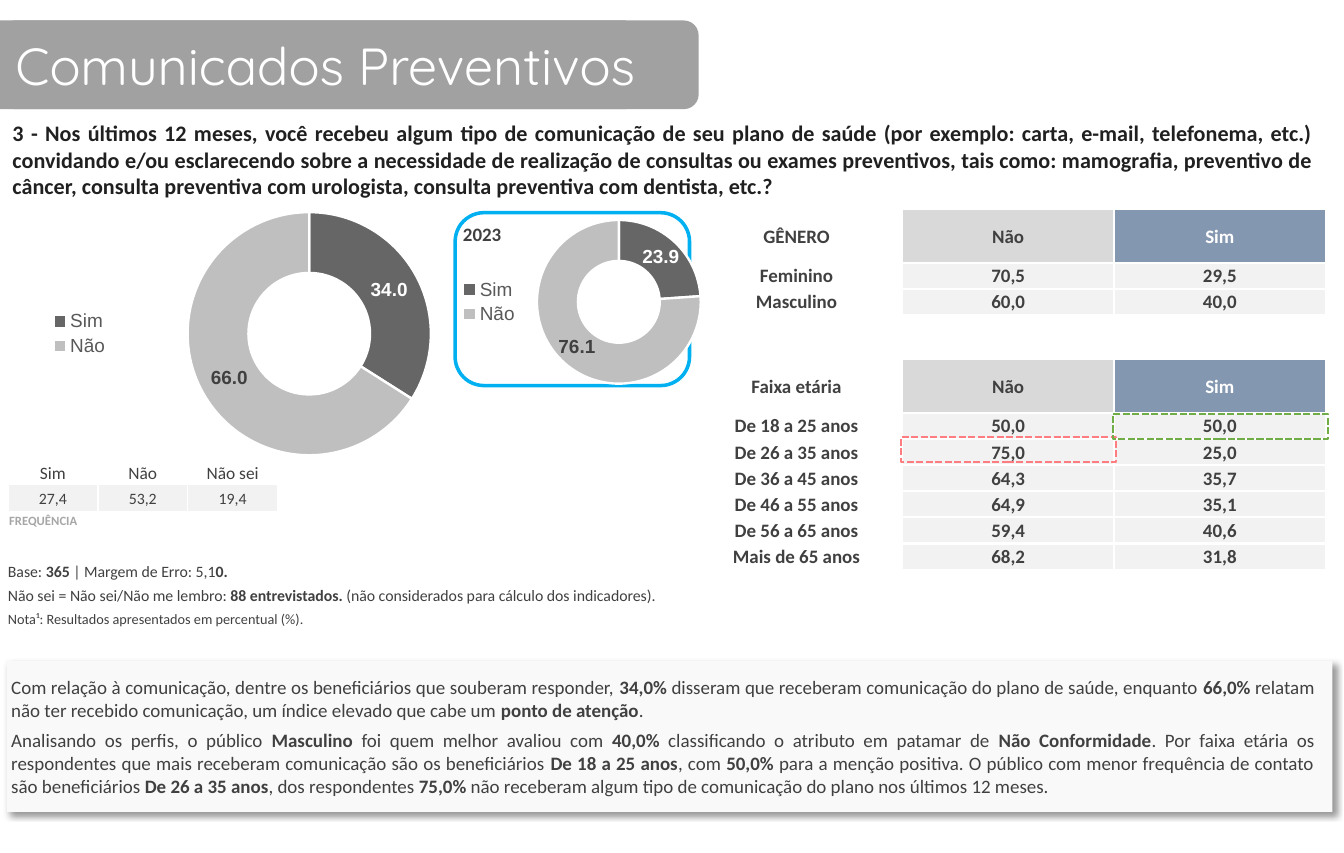
from lxml import etree
from pptx import Presentation
from pptx.chart.data import CategoryChartData
from pptx.dml.color import RGBColor
from pptx.enum.chart import XL_CHART_TYPE, XL_LEGEND_POSITION
from pptx.enum.dml import MSO_LINE
from pptx.enum.shapes import MSO_SHAPE
from pptx.enum.text import MSO_ANCHOR, PP_ALIGN
from pptx.oxml import parse_xml
from pptx.oxml.ns import nsdecls
from pptx.util import Cm, Inches, Pt

# Content; ** marks the start and end of bold text
TITLE = "Comunicados Preventivos"
QUESTION = (
    "**3 - Nos últimos 12 meses, você recebeu algum tipo de comunicação de seu plano de saúde "
    "(por exemplo: carta, e-mail, telefonema, etc.) convidando e/ou esclarecendo sobre a "
    "necessidade de realização de consultas ou exames preventivos, tais como: mamografia, "
    "preventivo de câncer, consulta preventiva com urologista, consulta preventiva com "
    "dentista, etc.?**"
)
NOTES = [
    ("Base: **365** | Margem de Erro: 5,1**0.**", 10),
    ("Não sei = Não sei/Não me lembro: **88 entrevistados.** "
     "(não considerados para cálculo dos indicadores).", 10),
    ("Nota¹: Resultados apresentados em percentual (%).", 9),
]
CONCLUSIONS = [
    "Com relação à comunicação, dentre os beneficiários que souberam responder, **34,0%** "
    "disseram que receberam comunicação do plano de saúde, enquanto **66,0%** relatam não ter "
    "recebido comunicação, um índice elevado que cabe um **ponto de atenção**.",
    "Analisando os perfis, o público **Masculino** foi quem melhor avaliou com **40,0%** "
    "classificando o atributo em patamar de **Não Conformidade**. Por faixa etária os "
    "respondentes que mais receberam comunicação são os beneficiários **De 18 a 25 anos**, com "
    "**50,0% **para a menção positiva. O público com menor frequência de contato são "
    "beneficiários **De 26 a 35 anos**, dos respondentes **75,0% **não receberam algum tipo de "
    "comunicação do plano nos últimos 12 meses.",
]
FREQUENCY = [("Sim", "Não", "Não sei"), ("27,4", "53,2", "19,4"), ("FREQUÊNCIA",)]
PROFILE = [
    ("GÊNERO", "Não", "Sim"),
    ("Feminino", "70,5", "29,5"),
    ("Masculino", "60,0", "40,0"),
    (),
    ("Faixa etária", "Não", "Sim"),
    ("De 18 a 25 anos", "50,0", "50,0"),
    ("De 26 a 35 anos", "75,0", "25,0"),
    ("De 36 a 45 anos", "64,3", "35,7"),
    ("De 46 a 55 anos", "64,9", "35,1"),
    ("De 56 a 65 anos", "59,4", "40,6"),
    ("Mais de 65 anos", "68,2", "31,8"),
]
PROFILE_HEADERS = (0, 4)
# Chart values, chart frame (inches) and ring frame (fractions of the chart)
DOUGHNUTS = [
    ((23.9, 76.1), (3.94, 1.72, 2.36, 1.87), (0.33, 0.11, 0.61, 0.78)),
    ((34, 66), (0.34, 1.72, 4.1, 2.43), (0.31, 0.06, 0.54, 0.88)),
]
HIGHLIGHTS = [(7.92, 3.84, "FF7C80"), (9.78, 3.64, "70AD47")]
TEXT, BANNER, PALE, WHITE = "404040", "A1A1A1", "F2F2F2", "FFFFFF"
SLICES = [("Sim", "666666", WHITE), ("Não", "BFBFBF", TEXT)]

presentation = Presentation()
presentation.slide_width = Cm(30)
presentation.slide_height = Inches(7.5)
slide = presentation.slides.add_slide(presentation.slide_layouts[6])


def color(value):
    return RGBColor.from_string(value)


def style_font(font, size, ink, bold=False, name="Calibri"):
    font.size, font.bold, font.name = Pt(size), bold, name
    font.color.rgb = color(ink)


def write(frame, paragraphs, size=12, ink=TEXT, name="Calibri", align=PP_ALIGN.LEFT,
          anchor=MSO_ANCHOR.TOP, margins=(0.1, 0.05, 0.1, 0.05), gap=0, wrap=True):
    frame.word_wrap, frame.vertical_anchor = wrap, anchor
    (frame.margin_left, frame.margin_top,
     frame.margin_right, frame.margin_bottom) = map(Inches, margins)
    for index, text in enumerate(paragraphs):
        paragraph = frame.add_paragraph() if index else frame.paragraphs[0]
        paragraph.alignment = align
        if index:
            paragraph.space_before = Pt(gap)
        for part, words in enumerate(text.split("**")):
            if words:
                run = paragraph.add_run()
                run.text = words
                style_font(run.font, size, ink, part % 2 == 1, name)


def add_box(kind, frame, fill=None, line=None, width=1.5, dash=None):
    shape = slide.shapes.add_shape(kind, *map(Inches, frame))
    shape.shadow.inherit = False
    if fill:
        shape.fill.solid()
        shape.fill.fore_color.rgb = color(fill)
    else:
        shape.fill.background()
    if line:
        shape.line.color.rgb = color(line)
        shape.line.width = Pt(width)
        shape.line.dash_style = dash
    else:
        shape.line.fill.background()
    return shape


def add_text(frame, paragraphs, **text_format):
    write(slide.shapes.add_textbox(*map(Inches, frame)).text_frame, paragraphs, **text_format)


def add_grid(left, top, widths, heights):
    table = slide.shapes.add_table(
        len(heights), len(widths), Inches(left), Inches(top),
        Inches(sum(widths)), Inches(sum(heights))).table
    table.first_row = table.horz_banding = False
    for column, width in zip(table.columns, widths):
        column.width = Inches(width)
    for row, height in zip(table.rows, heights):
        row.height = Inches(height)
    return table


def fill_cell(cell, text, fill=None, border=0, **text_format):
    write(cell.text_frame, [text], **text_format)
    cell.vertical_anchor = text_format.get("anchor", MSO_ANCHOR.TOP)
    (cell.margin_left, cell.margin_top,
     cell.margin_right, cell.margin_bottom) = map(Inches, (0.01, 0.01, 0.01, 0))
    if fill:
        cell.fill.solid()
        cell.fill.fore_color.rgb = color(fill)
    else:
        cell.fill.background()
    if border:
        for index, side in enumerate("LRTB"):
            cell._tc.get_or_add_tcPr().insert(index, parse_xml(
                f'<a:ln{side} {nsdecls("a")} w="{Pt(border)}"><a:solidFill>'
                f'<a:srgbClr val="{WHITE}"/></a:solidFill></a:ln{side}>'))


def add_doughnut(values, frame, ring):
    data = CategoryChartData(number_format="0.0")
    data.categories = [name for name, _, _ in SLICES]
    data.add_series("Series 1", values)
    chart = slide.shapes.add_chart(XL_CHART_TYPE.DOUGHNUT, *map(Inches, frame), data).chart
    chart.has_title = False
    style_font(chart.font, 10, "000000", name="Arial")
    chart.has_legend = True
    chart.legend.position = XL_LEGEND_POSITION.LEFT
    chart.legend.include_in_layout = False
    style_font(chart.legend.font, 12, "595959", name="Arial")
    plot = chart.plots[0]
    plot.vary_by_categories = True
    labels = plot.series[0].data_labels
    labels.show_value, labels.show_percentage = True, False
    labels.number_format, labels.number_format_is_linked = "0.0", False
    style_font(labels.font, 12, WHITE, True, "Arial")
    for index, (_, fill, ink) in enumerate(SLICES):
        point = plot.series[0].points[index]
        point.format.fill.solid()
        point.format.fill.fore_color.rgb = color(fill)
        point.format.line.color.rgb = color(WHITE)
        point.format.line.width = Pt(1.5)
        style_font(point.data_label.font, 12, ink, True, "Arial")
    # Ring placement and hole size
    plot._element.xpath("c:holeSize")[0].set("val", "50")
    area = chart._chartSpace.chart.plotArea
    for layout in area.xpath("c:layout"):
        area.remove(layout)
    settings = [("layoutTarget", "inner"), ("xMode", "edge"), ("yMode", "edge"),
                *zip("xywh", ring)]
    area.insert(0, parse_xml(
        f'<c:layout {nsdecls("c")}><c:manualLayout>'
        + "".join(f'<c:{tag} val="{value}"/>' for tag, value in settings)
        + "</c:manualLayout></c:layout>"))


# Title banner, squared at the slide's left edge, and question
add_box(MSO_SHAPE.RECTANGLE, (0, 0.18, 5.5, 0.78), BANNER)
banner = add_box(MSO_SHAPE.ROUNDED_RECTANGLE, (0, 0.18, 6.14, 0.78), BANNER)
write(banner.text_frame, [TITLE], size=33, ink=WHITE, name="Quicksand", anchor=MSO_ANCHOR.MIDDLE)
add_text((0, 0.99, 11.65, 0.82), [QUESTION], size=14, ink="202020",
         align=PP_ALIGN.JUSTIFY, margins=(0.11, 0.06, 0.11, 0.06))

# Notes
notes = add_grid(0.06, 4.94, [6.54], [0.21] * 3)
for row, (note, size) in enumerate(NOTES):
    fill_cell(notes.cell(row, 0), note, size=size)

# Conclusions on a shadowed panel
panel = add_box(MSO_SHAPE.RECTANGLE, (0.06, 5.81, 11.65, 1.33), "F9F9F9")
shadow = etree.SubElement(
    panel._element.spPr.xpath("a:effectLst")[0],
    "{http://schemas.openxmlformats.org/drawingml/2006/main}outerShdw",
    blurRad=str(Pt(4)), dist=str(Pt(3)), dir="2700000", algn="tl", rotWithShape="0")
shadow.append(parse_xml(
    f'<a:srgbClr {nsdecls("a")} val="000000"><a:alpha val="40000"/></a:srgbClr>'))
add_text((0, 5.89, 11.65, 1.18), CONCLUSIONS, align=PP_ALIGN.JUSTIFY, gap=5)

# Frequency table
frequency = add_grid(0.07, 4.06, [0.79] * 3, [0.2, 0.24, 0.24])
frequency.cell(2, 0).merge(frequency.cell(2, 2))
for column in range(3):
    fill_cell(frequency.cell(0, column), FREQUENCY[0][column], border=1, size=11,
              align=PP_ALIGN.CENTER, anchor=MSO_ANCHOR.BOTTOM)
    fill_cell(frequency.cell(1, column), FREQUENCY[1][column], PALE, 1, size=10,
              align=PP_ALIGN.CENTER, anchor=MSO_ANCHOR.MIDDLE)
fill_cell(frequency.cell(2, 0), f"**{FREQUENCY[2][0]}**", border=1, size=8, ink="A6A6A6")

# Profile table by gender and age
heights = [0.47 if row in PROFILE_HEADERS else 0.23 if texts else 0.39
           for row, texts in enumerate(PROFILE)]
profile = add_grid(6.07, 1.84, [1.86] * 3, heights)
for row, texts in enumerate(PROFILE):
    header = row in PROFILE_HEADERS
    fills = (None, "D9D9D9", "8497B0") if header else (None, PALE, PALE)
    for column, text in enumerate(texts):
        fill_cell(profile.cell(row, column), f"**{text}**", fills[column], 1.5,
                  ink=WHITE if header and column == 2 else TEXT,
                  align=PP_ALIGN.CENTER, anchor=MSO_ANCHOR.MIDDLE)
    if not texts:
        profile.cell(row, 0).merge(profile.cell(row, 2))
        fill_cell(profile.cell(row, 0), "", border=1.5)

# Highlighted cells
for left, top, line in HIGHLIGHTS:
    add_box(MSO_SHAPE.RECTANGLE, (left, top, 1.89, 0.22), line=line, dash=MSO_LINE.SQUARE_DOT)

# Frame of the 2023 result and both charts
add_box(MSO_SHAPE.ROUNDED_RECTANGLE, (4, 1.87, 2.06, 1.52), line="00B0F0", width=2.25)
add_text((3.97, 1.91, 0.55, 0.3), ["**2023**"], wrap=False)
for values, frame, ring in DOUGHNUTS:
    add_doughnut(values, frame, ring)

presentation.save("out.pptx")
